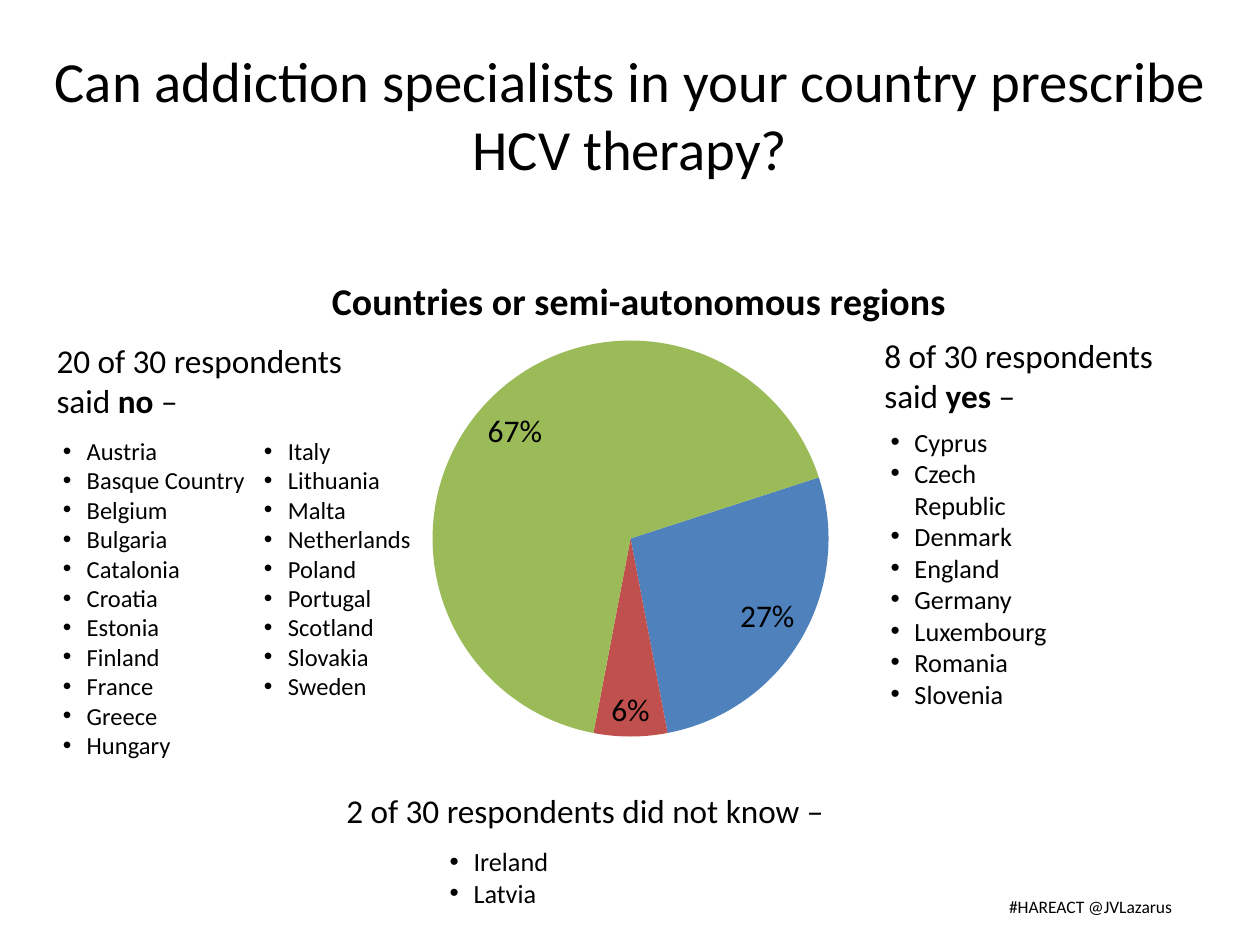
"""Build the slide on who may prescribe HCV therapy."""
import lxml.etree
import pptx
import pptx.chart.data
import pptx.dml.color
import pptx.enum.chart
import pptx.enum.text
import pptx.oxml.ns
import pptx.util
from pptx.util import Inches

FONT = "Calibri"
BLACK = pptx.dml.color.RGBColor(0x00, 0x00, 0x00)
BLUE = pptx.dml.color.RGBColor(0x4F, 0x81, 0xBD)
RED = pptx.dml.color.RGBColor(0xC0, 0x50, 0x4D)
GREEN = pptx.dml.color.RGBColor(0x9B, 0xBB, 0x59)

YES = ["Cyprus", "Czech Republic", "Denmark", "England", "Germany",
       "Luxembourg", "Romania", "Slovenia"]
NO = ["Austria", "Basque Country", "Belgium", "Bulgaria", "Catalonia",
      "Croatia", "Estonia", "Finland", "France", "Greece", "Hungary",
      "Italy", "Lithuania", "Malta", "Netherlands", "Poland", "Portugal",
      "Scotland", "Slovakia", "Sweden"]
UNKNOWN = ["Ireland", "Latvia"]


def set_font(font, size, bold=None):
    font.name = FONT
    font.size = pptx.util.Pt(size)
    font.color.rgb = BLACK
    font.bold = bold


def add_child(parent, tag, **attrs):
    return lxml.etree.SubElement(parent, pptx.oxml.ns.qn(tag), attrs)


def add_box(slide, left, top, width, height):
    sp = slide.shapes.add_textbox(Inches(left), Inches(top), Inches(width), Inches(height))
    sp.text_frame.word_wrap = True
    return sp.text_frame


def add_text(slide, left, top, width, height, size, text, bold="", after=""):
    tf = add_box(slide, left, top, width, height)
    p = tf.paragraphs[0]
    p.text = text
    set_font(p.font, size)
    if bold:
        r = p.add_run()
        r.text = bold
        r.font.bold = True
        p.add_run().text = after
    return tf


def add_title(slide, text):
    tf = add_text(slide, 0.06, 0.44, 9.88, 1.5, 32.4, text)
    tf.margin_top = 0
    tf.margin_bottom = Inches(0.58)
    tf.vertical_anchor = pptx.enum.text.MSO_ANCHOR.MIDDLE
    tf.paragraphs[0].alignment = pptx.enum.text.PP_ALIGN.CENTER


def add_bullets(slide, left, top, width, height, size, items, columns=1):
    tf = add_box(slide, left, top, width, height)
    body = tf._txBody.bodyPr
    body.set("numCol", str(columns))
    for i, item in enumerate(items):
        p = tf.paragraphs[0] if i == 0 else tf.add_paragraph()
        p.text = item
        set_font(p.font, size)
        pPr = p._p.get_or_add_pPr()
        pPr.set("marL", str(Inches(0.31)))
        pPr.set("indent", str(Inches(-0.19)))
        bullet_font = lxml.etree.Element(pptx.oxml.ns.qn("a:buFont"), typeface="Arial")
        bullet = lxml.etree.Element(pptx.oxml.ns.qn("a:buChar"), char="•")
        pPr.insert(0, bullet_font)
        pPr.insert(1, bullet)


def set_layout(parent, index, **places):
    for old in parent.findall(pptx.oxml.ns.qn("c:layout")):
        parent.remove(old)
    layout = lxml.etree.Element(pptx.oxml.ns.qn("c:layout"))
    manual = add_child(layout, "c:manualLayout")
    if "w" in places:
        add_child(manual, "c:layoutTarget", val="inner")
    for axis in ("x", "y"):
        add_child(manual, f"c:{axis}Mode", val="edge")
    for name, value in places.items():
        add_child(manual, f"c:{name}", val=str(value))
    parent.insert(index, layout)


def add_pie(slide):
    data = pptx.chart.data.CategoryChartData()
    data.categories = ["1", "2", "3"]
    data.add_series("Series 1", (27, 6, 67))
    chart = slide.shapes.add_chart(
        pptx.enum.chart.XL_CHART_TYPE.PIE,
        Inches(1.54), Inches(1.85), Inches(6.93), Inches(4.49), data).chart
    set_font(chart.font, 18)
    chart.has_legend = False
    chart.has_title = True
    p = chart.chart_title.text_frame.paragraphs[0]
    p.text = "Countries or semi-autonomous regions"
    set_font(p.font, 21.6, True)
    set_layout(chart.chart_title._element, 1, x=0.15, y=0.06)

    plot = chart.plots[0]
    plot.vary_by_categories = True
    for i, color in enumerate((BLUE, RED, GREEN)):
        fill = plot.series[0].points[i].format.fill
        fill.solid()
        fill.fore_color.rgb = color
    plot.has_data_labels = True
    labels = plot.data_labels
    set_font(labels.font, 18)
    labels.show_value = False
    labels.show_percentage = True
    labels.number_format = "0%"
    labels.number_format_is_linked = False
    labels.position = pptx.enum.chart.XL_LABEL_POSITION.INSIDE_END

    pie = plot._element
    for old in pie.findall(pptx.oxml.ns.qn("c:firstSliceAng")):
        pie.remove(old)
    add_child(pie, "c:firstSliceAng", val="72")
    set_layout(pie.getparent(), 0, x=0.27, y=0.19, w=0.46, h=0.7)


def main():
    prs = pptx.Presentation()
    prs.slide_width = Inches(10)
    prs.slide_height = Inches(7.5)
    slide = prs.slides.add_slide(prs.slide_layouts[6])
    add_title(slide, "Can addiction specialists in your country prescribe HCV therapy?")
    add_pie(slide)
    add_text(slide, 6.92, 2.61, 3.02, 0.74, 19, "8 of 30 respondents \vsaid ", "yes", " –")
    add_bullets(slide, 6.85, 3.33, 1.6, 2.42, 15, YES)
    add_text(slide, 0.35, 2.65, 2.91, 1.11, 19, "20 of 30 respondents said ", "no", " –")
    add_bullets(slide, 0.28, 3.41, 3.39, 2.72, 14, NO, columns=2)
    add_text(slide, 2.65, 6.22, 4.29, 0.42, 19, "2 of 30 respondents did not know –")
    add_bullets(slide, 3.35, 6.66, 2.28, 0.55, 15, UNKNOWN)
    add_text(slide, 7.91, 7.06, 1.59, 0.27, 10, "#HAREACT @JVLazarus")
    prs.save("out.pptx")


if __name__ == "__main__":
    main()
